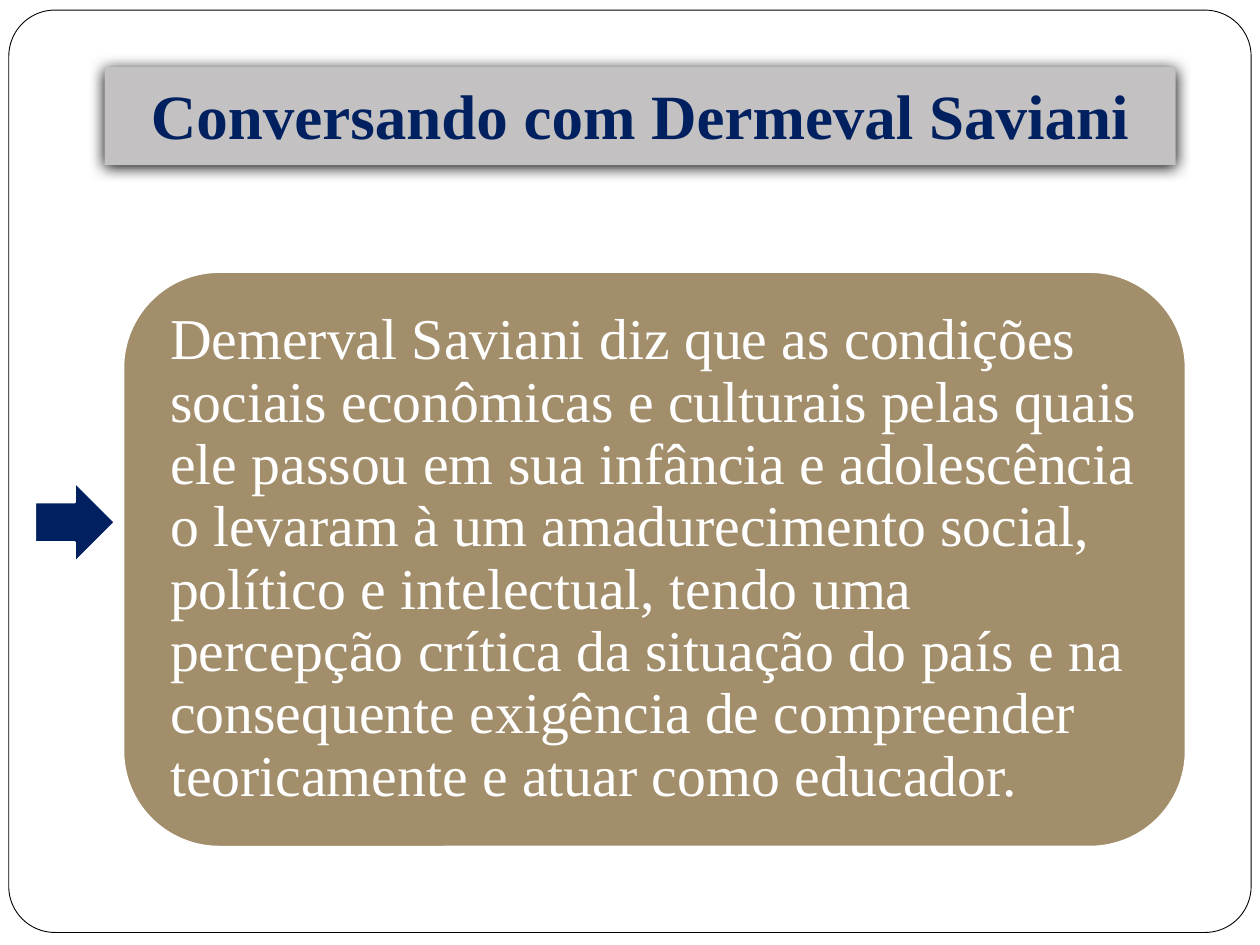
from dataclasses import dataclass

from lxml import etree
from pptx import Presentation
from pptx.dml.color import RGBColor
from pptx.enum.shapes import MSO_SHAPE
from pptx.enum.text import MSO_ANCHOR, MSO_AUTO_SIZE, PP_ALIGN
from pptx.oxml.ns import qn
from pptx.util import Inches, Pt

ROUND, ARROW = MSO_SHAPE.ROUNDED_RECTANGLE, MSO_SHAPE.RIGHT_ARROW
MIDDLE, BOTTOM = MSO_ANCHOR.MIDDLE, MSO_ANCHOR.BOTTOM
LEFT, CENTER = PP_ALIGN.LEFT, PP_ALIGN.CENTER
FIXED = MSO_AUTO_SIZE.NONE
WIDE, HIGH = Inches(10), Inches(7.5)
FONT = "Times New Roman"
HUES = {"white": "FFFFFF", "black": "000000", "navy": "002060",
        "tan": "A28E6A", "gray": "C3C1C1"}
TITLE = "Conversando com Dermeval Saviani"
BODY = ("Demerval Saviani diz que as condições sociais econômicas e culturais "
        "pelas quais ele passou em sua infância e adolescência o levaram à um "
        "amadurecimento social, político e intelectual, tendo uma percepção "
        "crítica da situação do país e na consequente exigência de compreender "
        "teoricamente e atuar como educador.")


@dataclass
class Box:
    left: float
    top: float
    width: float
    height: float

    def place(self) -> tuple:
        return (int(WIDE * self.left / 100), int(HIGH * self.top / 100),
                int(WIDE * self.width / 100), int(HIGH * self.height / 100))


@dataclass
class Panel:
    kind: int
    box: Box
    fill: str
    line: str
    weight: float
    curve: float | None = None


PANELS = [
    Panel(ROUND, Box(0.7, 1.07, 98.6, 97.6), "white", "black", 0.5, 0.05),
    Panel(ROUND, Box(9.8, 28.8, 84.3, 60.8), "tan", "white", 1),
    Panel(ARROW, Box(2.8, 51.07, 6.3, 8.4), "navy", "white", 1),
]
TEXT = Box(12.1, 31.73, 79.8, 54.93)
HEAD = Box(8.3, 7.07, 85, 10.4)


def hue(name: str) -> RGBColor:
    return RGBColor.from_string(HUES[name])


def draw(slide, panel: Panel) -> None:
    shape = slide.shapes.add_shape(panel.kind, *panel.box.place())
    shape.shadow.inherit = False
    shape.fill.solid()
    shape.fill.fore_color.rgb = hue(panel.fill)
    shape.line.color.rgb = hue(panel.line)
    shape.line.width = Pt(panel.weight)
    if panel.curve is not None:
        shape.adjustments[0] = panel.curve


def write(shape, text: str, size: float, color: str, bold: bool,
          align: int, anchor: int, pads: tuple):
    frame = shape.text_frame
    frame.text = text
    frame.word_wrap = True
    frame.auto_size = FIXED
    frame.vertical_anchor = anchor
    (frame.margin_left, frame.margin_top,
     frame.margin_right, frame.margin_bottom) = map(Inches, pads)
    para = frame.paragraphs[0]
    para.alignment = align
    font = para.runs[0].font
    font.name, font.size, font.bold = FONT, Pt(size), bold
    font.color.rgb = hue(color)
    return para


def shade(shape, blur: float, dist: float, angle: int) -> None:
    shape.shadow.inherit = False
    glow = shape.element.spPr.find(qn("a:effectLst"))
    outer = etree.SubElement(glow, qn("a:outerShdw"), blurRad=str(Pt(blur)),
                             dist=str(Pt(dist)), dir=str(angle * 60000),
                             algn="ctr", rotWithShape="0")
    etree.SubElement(outer, qn("a:srgbClr"), val=HUES["black"])


def main() -> None:
    deck = Presentation()
    deck.slide_width, deck.slide_height = WIDE, HIGH
    slide = deck.slides.add_slide(deck.slide_layouts[5])
    for panel in PANELS:
        draw(slide, panel)

    body = slide.shapes.add_textbox(*TEXT.place())
    para = write(body, BODY, 33, "white", False, LEFT, MIDDLE, (0.14,) * 4)
    para.line_spacing = 0.9

    title = slide.shapes.title
    title.left, title.top, title.width, title.height = HEAD.place()
    title.fill.solid()
    title.fill.fore_color.rgb = hue("gray")
    write(title, TITLE, 36, "navy", True, CENTER, BOTTOM, (0.1, 0.05, 0.1, 0.1))
    shade(title, 8.5, 1, 90)
    title.element.getparent().append(title.element)
    deck.save("out.pptx")


if __name__ == "__main__":
    main()
